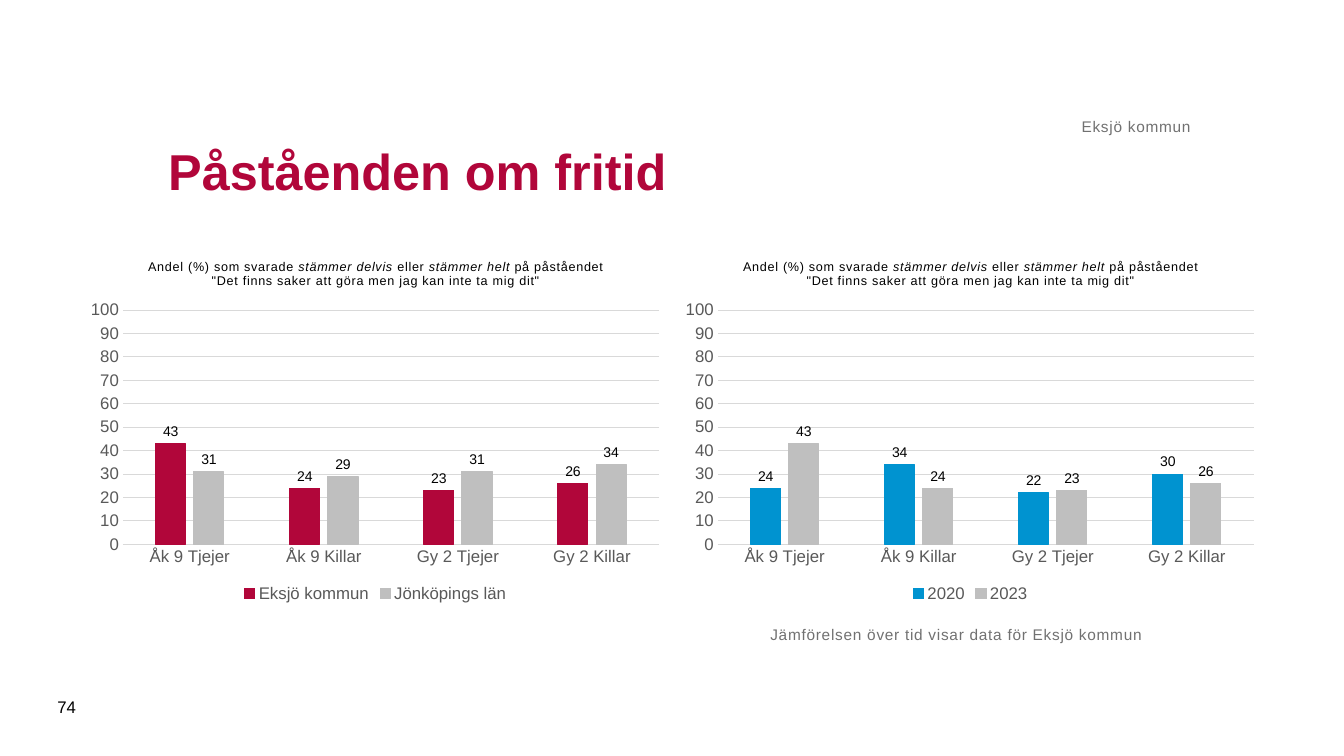
from dataclasses import dataclass

from lxml.etree import SubElement
from pptx import Presentation
from pptx.chart.data import CategoryChartData
from pptx.dml.color import RGBColor
from pptx.enum.chart import (XL_CHART_TYPE, XL_LABEL_POSITION,
                             XL_LEGEND_POSITION, XL_TICK_MARK)
from pptx.enum.text import MSO_ANCHOR, PP_ALIGN
from pptx.oxml.ns import qn
from pptx.util import Inches, Pt


@dataclass(frozen=True)
class Theme:
    font: str = "Arial"
    red: str = "B1063A"
    blue: str = "0093D0"
    silver: str = "BFBFBF"
    grid: str = "D9D9D9"
    axis_text: str = "595959"
    note_text: str = "717171"
    black: str = "000000"
    title_size: float = 36
    axis_size: float = 12
    note_size: float = 11
    label_size: float = 10
    chart_title_size: float = 9
    tracking: float = 0.5


THEME = Theme()
NUMBER_FORMAT = "#,##0;#,##0"
CATEGORIES = ["Åk 9 Tjejer", "Åk 9 Killar", "Gy 2 Tjejer", "Gy 2 Killar"]
# Lines of (text, italic) runs
CHART_TITLE = [
    [("Andel (%) som svarade ", False), ("stämmer delvis", True),
     (" eller ", False), ("stämmer helt", True), (" på påståendet", False)],
    [('"Det finns saker att göra men jag kan inte ta mig dit"', False)],
]


def set_font(font, size, color, bold=False, italic=False):
    font.name = THEME.font
    font.size = Pt(size)
    font.bold = bold
    font.italic = italic
    font.color.rgb = RGBColor.from_string(color)


def track(r):
    """Widen the letter spacing of a run."""
    r._r.get_or_add_rPr().set("spc", str(int(THEME.tracking * 100)))


def set_line(line, color):
    line.color.rgb = RGBColor.from_string(color)
    line.width = Pt(0.75)


def add_text(s, text, box, size, color, bold=False, tracked=False,
             inset=True, anchor=MSO_ANCHOR.MIDDLE, align=PP_ALIGN.LEFT):
    tf = s.shapes.add_textbox(*map(Inches, box)).text_frame
    tf.word_wrap = True
    tf.vertical_anchor = anchor
    if not inset:
        tf.margin_left = tf.margin_right = tf.margin_top = tf.margin_bottom = 0
    p = tf.paragraphs[0]
    p.alignment = align
    r = p.add_run()
    r.text = text
    set_font(r.font, size, color, bold)
    if tracked:
        track(r)


def add_chart_title(chart):
    chart.has_title = True
    chart.chart_title.include_in_layout = False
    tf = chart.chart_title.text_frame
    for i, runs in enumerate(CHART_TITLE):
        p = tf.add_paragraph() if i else tf.paragraphs[0]
        p.alignment = PP_ALIGN.CENTER
        set_font(p.font, THEME.chart_title_size, THEME.black)
        for text, italic in runs:
            r = p.add_run()
            r.text = text
            set_font(r.font, THEME.chart_title_size, THEME.black, italic=italic)
            track(r)


def style_axes(chart):
    for axis in (chart.category_axis, chart.value_axis):
        axis.major_tick_mark = axis.minor_tick_mark = XL_TICK_MARK.NONE
        set_font(axis.tick_labels.font, THEME.axis_size, THEME.axis_text)
    chart.category_axis.has_major_gridlines = False
    set_line(chart.category_axis.format.line, THEME.grid)

    values = chart.value_axis
    values.minimum_scale, values.maximum_scale, values.major_unit = 0, 100, 10
    values.tick_labels.number_format = NUMBER_FORMAT
    values.tick_labels.number_format_is_linked = False
    values.format.line.fill.background()
    set_line(values.major_gridlines.format.line, THEME.grid)


def style_series(series, color):
    series.format.fill.solid()
    series.format.fill.fore_color.rgb = RGBColor.from_string(color)
    set_line(series.format.line, color)
    labels = series.data_labels
    labels.show_value = True
    labels.position = XL_LABEL_POSITION.OUTSIDE_END
    labels.number_format = NUMBER_FORMAT
    labels.number_format_is_linked = False
    set_font(labels.font, THEME.label_size, THEME.black)


def place_plot(chart):
    """Fix the inner plot area as fractions of the chart's size."""
    area = chart._chartSpace.chart.plotArea
    layout = area.find(qn("c:layout"))
    if layout is None:
        layout = SubElement(area, qn("c:layout"))
        area.insert(0, layout)
    manual = SubElement(layout, qn("c:manualLayout"))
    for tag, val in (("layoutTarget", "inner"), ("xMode", "edge"),
                     ("yMode", "edge"), ("x", "0.073"), ("y", "0.187"),
                     ("w", "0.906"), ("h", "0.642")):
        SubElement(manual, qn(f"c:{tag}")).set("val", val)


def add_column_chart(s, left, series):
    """series holds (name, values, color) tuples."""
    data = CategoryChartData(number_format=NUMBER_FORMAT)
    data.categories = CATEGORIES
    for name, values, _ in series:
        data.add_series(name, values)
    chart = s.shapes.add_chart(
        XL_CHART_TYPE.COLUMN_CLUSTERED, Inches(left), Inches(2.4),
        Inches(5.87), Inches(3.62), data).chart
    set_font(chart.font, THEME.label_size, THEME.black)
    add_chart_title(chart)
    style_axes(chart)
    place_plot(chart)

    plot = chart.plots[0]
    plot.gap_width, plot.overlap = 219, -27
    plot.vary_by_categories = False
    for drawn, (_, _, color) in zip(plot.series, series):
        style_series(drawn, color)

    chart.has_legend = True
    chart.legend.position = XL_LEGEND_POSITION.BOTTOM
    chart.legend.include_in_layout = False
    set_font(chart.legend.font, THEME.axis_size, THEME.axis_text)


def main():
    prs = Presentation()
    prs.slide_width, prs.slide_height = Inches(13.33), Inches(7.5)
    s = prs.slides.add_slide(prs.slide_layouts[6])

    municipality = [43, 24, 23, 26]
    add_column_chart(s, 0.79, [
        ("Eksjö kommun", municipality, THEME.red),
        ("Jönköpings län", [31, 29, 31, 34], THEME.silver)])
    add_column_chart(s, 6.69, [
        ("2020", [24, 34, 22, 30], THEME.blue),
        ("2023", municipality, THEME.silver)])

    add_text(s, "Påståenden om fritid", (1.57, 0.98, 10.24, 1.42),
             THEME.title_size, THEME.red, bold=True)
    add_text(s, "Jämförelsen över tid visar data för Eksjö kommun",
             (7.64, 6.2, 5.31, 0.94), THEME.note_size, THEME.note_text,
             tracked=True, inset=False, anchor=MSO_ANCHOR.TOP)
    add_text(s, "Eksjö kommun", (1.57, 0.62, 10.24, 0.73),
             THEME.note_size, THEME.note_text, tracked=True, inset=False,
             anchor=MSO_ANCHOR.BOTTOM, align=PP_ALIGN.RIGHT)
    add_text(s, "74", (0.47, 6.81, 0.57, 0.4), THEME.axis_size, THEME.black)
    prs.save("out.pptx")


if __name__ == "__main__":
    main()
